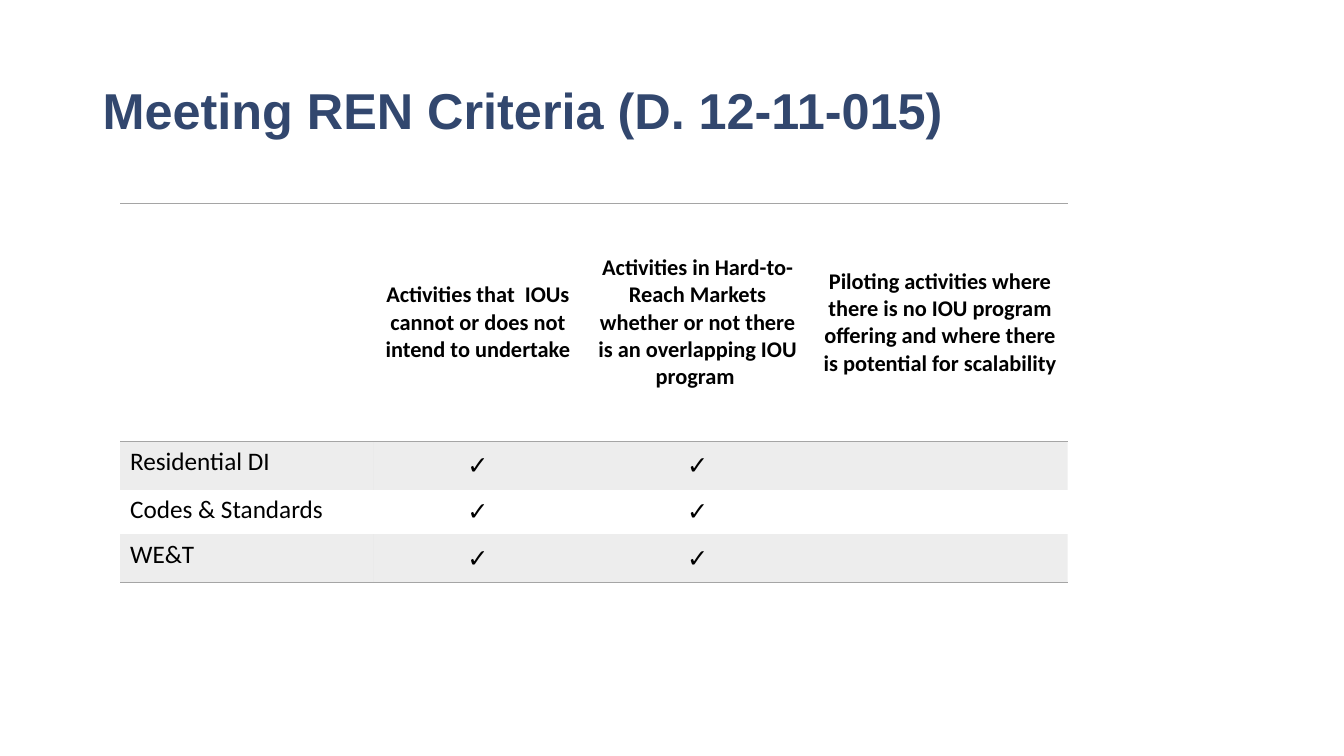
from dataclasses import dataclass

from lxml import etree
from pptx import Presentation
from pptx.dml.color import RGBColor
from pptx.enum.text import MSO_ANCHOR, PP_ALIGN
from pptx.oxml.ns import qn
from pptx.util import Inches, Pt

MIDDLE, TOP = MSO_ANCHOR.MIDDLE, MSO_ANCHOR.TOP
CENTER, LEFT = PP_ALIGN.CENTER, PP_ALIGN.LEFT
SLIDE_WIDTH, SLIDE_HEIGHT = Inches(13.33), Inches(7.5)
NO_STYLE_NO_GRID = "{2D5ABB26-0587-4C30-8999-92F81FD0307C}"


@dataclass(frozen=True)
class Theme:
    title_font: str = "Arial"
    table_font: str = "Calibri"
    title_size: int = 36
    header_size: int = 16
    body_size: int = 18
    title_color: str = "32476E"
    text_color: str = "000000"
    rule_color: str = "A5A5A5"
    rule_width: int = 1
    band_opacity: int = 20


THEME = Theme()

# Shares of the slide, in percent
TITLE_AREA = (6.9, 5.33, 86.27, 19.33)
TABLE_CORNER = (8.93, 26.93)
COLUMN_SHARES = (18.83, 15.6, 17.1, 18.98)
ROW_SHARES = (31.47, 6.4, 5.87, 6.4)

CRITERIA = (
    "Activities that  IOUs cannot or does not intend to undertake",
    "Activities in Hard-to-Reach Markets whether or not there is an overlapping IOU program ",
    "Piloting activities where there is no IOU program offering and where there is potential for scalability",
)
PROGRAMS = (
    ("Residential DI ", "✓", "✓", ""),
    ("Codes & Standards", "✓", "✓", ""),
    ("WE&T", "✓", "✓", ""),
)


def across(percent):
    return round(SLIDE_WIDTH * percent / 100)


def down(percent):
    return round(SLIDE_HEIGHT * percent / 100)


def add_span(para, text, font, size, color, bold=False):
    span = para.add_run()
    span.text = text
    span.font.name = font
    span.font.size = Pt(size)
    span.font.bold = bold
    span.font.color.rgb = RGBColor.from_string(color)


def add_title(page, text):
    left, top, width, height = TITLE_AREA
    box = page.shapes.add_textbox(across(left), down(top), across(width), down(height))
    frame = box.text_frame
    frame.word_wrap = True
    frame.vertical_anchor = MIDDLE
    para = frame.paragraphs[0]
    para.line_spacing = 0.9
    add_span(para, text, THEME.title_font, THEME.title_size, THEME.title_color, bold=True)


def add_rule(cell, edge):
    """Draw a border; edge is lnT or lnB, added in that order and before the fill."""
    properties = cell._tc.get_or_add_tcPr()
    line = etree.SubElement(properties, qn(f"a:{edge}"), w=str(Pt(THEME.rule_width)))
    paint = etree.SubElement(line, qn("a:solidFill"))
    etree.SubElement(paint, qn("a:srgbClr"), val=THEME.rule_color)


def fill_band(cell):
    cell.fill.solid()
    cell.fill.fore_color.rgb = RGBColor.from_string(THEME.rule_color)
    color = cell._tc.tcPr.find(f".//{qn('a:solidFill')}[last()]/{qn('a:srgbClr')}")
    color = cell._tc.tcPr.find(qn("a:solidFill")).find(qn("a:srgbClr"))
    etree.SubElement(color, qn("a:alpha"), val=str(THEME.band_opacity * 1000))


def write_cell(cell, text, is_header, is_label):
    cell.vertical_anchor = TOP if is_label else MIDDLE
    para = cell.text_frame.paragraphs[0]
    para.alignment = LEFT if is_label else CENTER
    if text:
        size = THEME.header_size if is_header else THEME.body_size
        add_span(para, text, THEME.table_font, size, THEME.text_color, bold=is_header)


def add_criteria_table(page):
    rows = (("",) + CRITERIA,) + PROGRAMS
    left, top = TABLE_CORNER
    frame = page.shapes.add_table(
        len(rows), len(COLUMN_SHARES), across(left), down(top),
        across(sum(COLUMN_SHARES)), down(sum(ROW_SHARES)))
    table = frame.table
    table.first_row = table.horz_banding = False
    table._tbl.tblPr.find(qn("a:tableStyleId")).text = NO_STYLE_NO_GRID
    for column, share in zip(table.columns, COLUMN_SHARES):
        column.width = across(share)
    for row, share in zip(table.rows, ROW_SHARES):
        row.height = down(share)

    for row_index, texts in enumerate(rows):
        is_header = row_index == 0
        for column_index, text in enumerate(texts):
            cell = table.cell(row_index, column_index)
            write_cell(cell, text, is_header, is_label=column_index == 0)
            if is_header:
                add_rule(cell, "lnT")
            if is_header or row_index == len(rows) - 1:
                add_rule(cell, "lnB")
            if row_index % 2:
                fill_band(cell)
            else:
                cell.fill.background()


def main():
    deck = Presentation()
    deck.slide_width, deck.slide_height = SLIDE_WIDTH, SLIDE_HEIGHT
    page = deck.slides.add_slide(deck.slide_layouts[6])
    add_title(page, "Meeting REN Criteria (D. 12-11-015)")
    add_criteria_table(page)
    deck.save("out.pptx")


if __name__ == "__main__":
    main()
